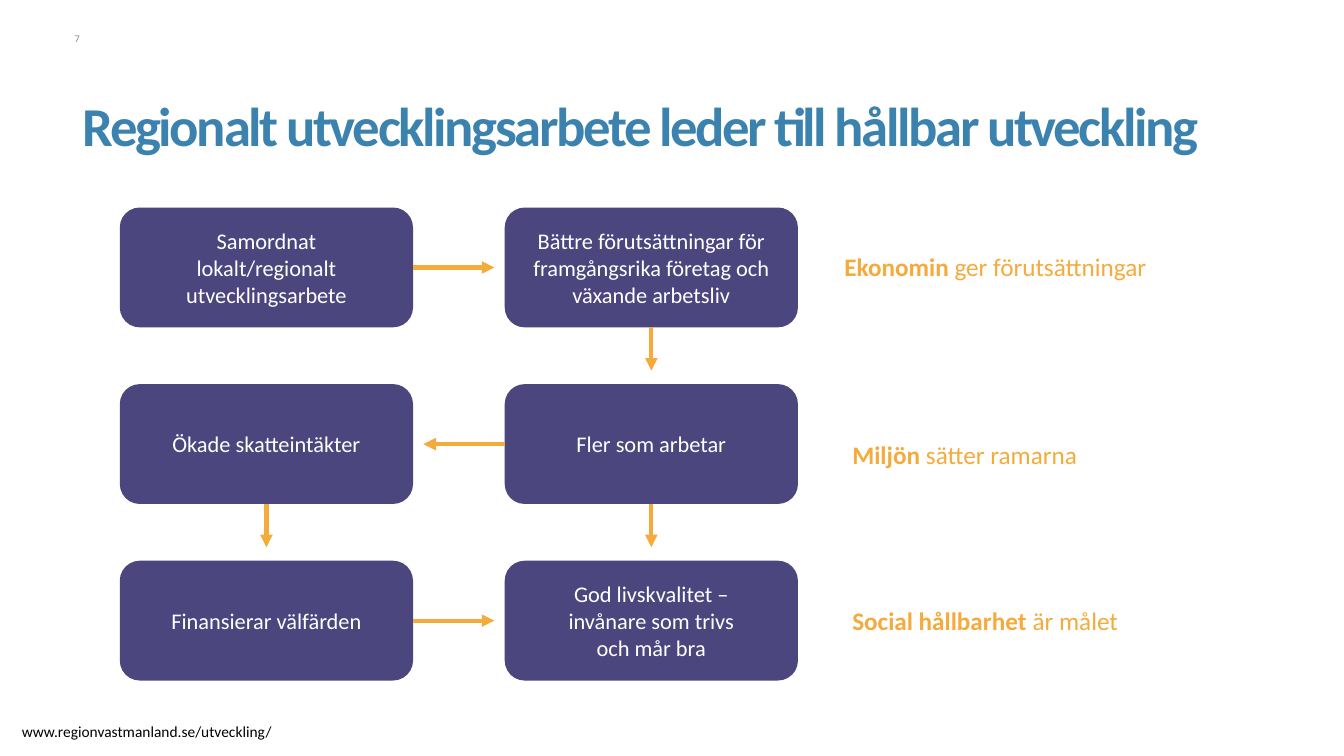
from lxml import etree
from pptx import Presentation
from pptx.dml.color import RGBColor
from pptx.enum.shapes import MSO_CONNECTOR, MSO_SHAPE
from pptx.enum.text import MSO_ANCHOR as Anchor, PP_ALIGN as Align
from pptx.oxml.ns import qn
from pptx.util import Cm, Pt

PURPLE, ORANGE, BLUE = "4B467D", "F5AA3C", "3C82AF"
color = RGBColor.from_string


def write(frame, lines, size, hex_color, align=Align.LEFT):
    frame.word_wrap = True
    paragraph = frame.paragraphs[0]
    paragraph.alignment = align
    for number, line in enumerate(lines):
        if number:
            paragraph.add_line_break()
        for words, bold in line:
            run = paragraph.add_run()
            run.text = words
            run.font.name = "Calibri"
            run.font.size = Pt(size)
            run.font.bold = bold
            run.font.color.rgb = color(hex_color)
    return paragraph


def add_text(left, top, width, height):
    return slide.shapes.add_textbox(Cm(left), Cm(top), Cm(width), Cm(height)).text_frame


prs = Presentation()
prs.slide_width, prs.slide_height = Cm(33.87), Cm(19.05)
slide = prs.slides.add_slide(prs.slide_layouts[6])

title = add_text(2.08, 2.39, 29.67, 1.78)
title.margin_left = title.margin_right = title.margin_top = 0
title.margin_bottom = Cm(0.2)
title.vertical_anchor = Anchor.BOTTOM
heading = write(title, [[("Regionalt utvecklingsarbete leder till hållbar utveckling", True)]], 39.1, BLUE)
heading.line_spacing = 0.85
heading.runs[0].font._element.set("spc", "-170")

page_number = add_text(1.4, 0.81, 0.61, 0.3)
page_number.margin_left = page_number.margin_right = 0
page_number.margin_top = page_number.margin_bottom = 0
write(page_number, [[("7", False)]], 7.3, "8C8C8C", Align.RIGHT)

steps = {
    "cooperation": (0, 0, ["Samordnat", "lokalt/regionalt utvecklingsarbete"]),
    "business": (1, 0, ["Bättre förutsättningar för framgångsrika företag och växande arbetsliv"]),
    "jobs": (1, 1, ["Fler som arbetar"]),
    "taxes": (0, 1, ["Ökade skatteintäkter"]),
    "welfare": (0, 2, ["Finansierar välfärden"]),
    "quality": (1, 2, ["God livskvalitet –", "invånare som trivs", "och mår bra"]),
}
STEP_W, STEP_H = 7.39, 3.02
boxes = {}
for step, (column, row, lines) in steps.items():
    box = slide.shapes.add_shape(
        MSO_SHAPE.ROUNDED_RECTANGLE,
        Cm(3.02 + 9.7 * column), Cm(5.23 + 4.45 * row), Cm(STEP_W), Cm(STEP_H),
    )
    box.shadow.inherit = False
    box.fill.solid()
    box.fill.fore_color.rgb = color(PURPLE)
    box.line.fill.background()
    box.text_frame.vertical_anchor = Anchor.MIDDLE
    write(box.text_frame, [[(line, False)] for line in lines], 16, "FFFFFF", Align.CENTER)
    boxes[step] = box

BOTTOM, LEFT, RIGHT = 2, 1, 3
reach = {BOTTOM: (0, 1.09), LEFT: (-2.05, 0), RIGHT: (2.05, 0)}
flow = [
    ("cooperation", RIGHT), ("business", BOTTOM), ("jobs", LEFT),
    ("jobs", BOTTOM), ("taxes", BOTTOM), ("welfare", RIGHT),
]
for step, side in flow:
    arrow = slide.shapes.add_connector(MSO_CONNECTOR.STRAIGHT, 0, 0, 0, 0)
    arrow.begin_connect(boxes[step], side)
    across, down = reach[side]
    arrow.end_x = arrow.begin_x + Cm(across)
    arrow.end_y = arrow.begin_y + Cm(down)
    arrow.line.color.rgb = color(ORANGE)
    arrow.line.width = Pt(3)
    etree.SubElement(arrow.line._get_or_add_ln(), qn("a:tailEnd"), type="triangle")
    etree.SubElement(arrow._element.spPr, qn("a:effectLst"))

dimensions = [
    (21.03, 6.2, "Ekonomin ", "ger förutsättningar"),
    (21.23, 10.95, "Miljön ", "sätter ramarna"),
    (21.23, 15.12, "Social hållbarhet ", "är målet"),
]
for left, top, dimension, role in dimensions:
    write(add_text(left, top, 9, 1.02), [[(dimension, True), (role, False)]], 18, ORANGE)

write(add_text(0.3, 18.08, 7.06, 0.73), [[("www.regionvastmanland.se/utveckling/", False)]], 11, "000000")

prs.save("out.pptx")
